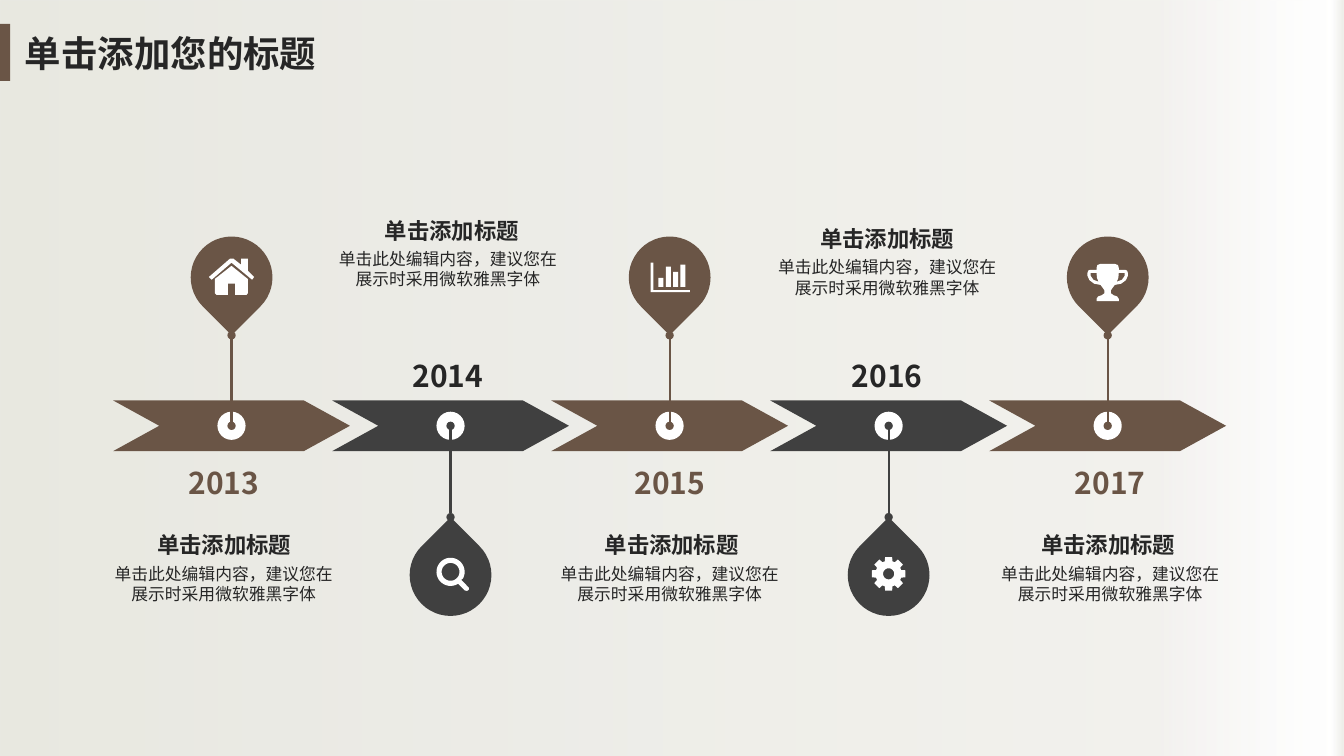
from math import cos, radians, sin

from lxml import etree
from pptx import Presentation
from pptx.dml.color import RGBColor
from pptx.enum import shapes, text
from pptx.oxml.ns import qn
from pptx.util import Cm, Pt

TITLE = "单击添加您的标题"
HEADING = "单击添加标题"
BODY = "单击此处编辑内容，建议您在展示时采用微软雅黑字体"

# year, icon, text column centre, heading centre, heading top (cm)
MILESTONES = [
    ("2013", "house", 5.64, 5.65, 13.39),
    ("2014", "magnifier", 11.29, 11.39, 5.46),
    ("2015", "chart", 16.88, 16.93, 13.39),
    ("2016", "gear", 22.36, 22.36, 5.67),
    ("2017", "trophy", 27.98, 27.93, 13.39),
]


class Theme:
    font = "Noto Sans CJK SC"
    brown, grey, ink, white = "6A5546", "404040", "262626", "FFFFFF"
    title, year, heading, body, stem = 26, 21.4, 16, 12, 1.5
    # position %, colour, opacity %
    backdrop = [(0, "E7E7DF", 94), (86, "F0EFEB", 85),
                (99, "FFFFFF", 62), (100, "EBEBE5", 100)]


# Layout in cm
SLIDE_W, SLIDE_H = 33.87, 19.05
ARROW_LEFT, ARROW_W, ARROW_H, PITCH = 2.85, 5.97, 1.28, 5.52
AXIS_Y = 10.73
RING, PIN = 0.71, 2.06
PIN_UP_Y, PIN_DOWN_Y = 6.99, 14.49
PIN_REACH = 1.46
YEAR_UP_Y, YEAR_DOWN_Y = 9.47, 12.17


def arc(cx, cy, radius, start=0, end=360, step=10):
    return [(cx + radius * cos(radians(a)), cy + radius * sin(radians(a)))
            for a in range(start, end, step)]


def mirrored(points):
    return [(-x, y) for x, y in reversed(points)]


def bar(left, top):
    return [(left, top), (left + 1.25, top), (left + 1.25, 2.4), (left, 2.4)]


CUP = [(0, -3.4), (1.8, -3.4), (2.6, -3.1), (2.8, -2.4), (2.8, -1.9),
       (4.4, -1.9), (4.9, -1.7), (5.1, -1.1), (5.1, -0.4), (4.6, 0.7),
       (3.4, 1.6), (1.8, 1.9), (1.2, 2.7), (0.8, 3.3), (0.8, 4), (1.5, 4.5),
       (2.4, 4.8), (2.8, 5.4), (2.8, 6), (0, 6)]
HANDLE = [(4.3, -1.1), (2.8, -1.1), (2.7, 0.1), (2.3, 1.1), (3.6, 0.6), (4.3, -0.4)]
TOOTH = [(-17, 3.3), (-12, 4.3), (12, 4.3), (17, 3.3)]  # angle, radius

# Outlines in mm from the pin centre
ICONS = {
    "house": [
        [(5.2, 0.6), (0, -3.7), (-5, 0.6), (-5.7, -0.1), (-0.4, -4.7),
         (0.5, -4.7), (2.4, -3.2), (2.4, -4.7), (4.1, -4.7), (4.1, -1.7),
         (5.7, -0.1)],
        [(4.1, 0.4), (4.1, 4), (3.8, 4.4), (0.9, 4.4), (0.9, 1.6), (-0.9, 1.6),
         (-0.9, 4.4), (-3.8, 4.4), (-4.2, 4), (-4.2, 0.4), (0, -2.9)],
    ],
    "magnifier": [
        arc(0, -0.8, 3.55, 58, 397) + [(2.7, 1.2), (4.6, 3.2), (4.6, 3.7),
                                       (4.2, 4), (3.6, 3.9), (1.9, 2.2)],
        arc(0, -0.8, 2.25)[::-1],
    ],
    "chart": [
        [(5.1, 3.7), (-4.8, 3.7), (-4.8, -3.7), (-4.1, -3.7), (-4.1, 3.2), (5.1, 3.2)],
        *[bar(-2.8 + 1.85 * i, top) for i, top in enumerate((0.1, -2.7, -1.4, -3.2))],
    ],
    "gear": [
        [(r * cos(radians(t + a)), r * sin(radians(t + a)) - 0.3)
         for t in range(0, 360, 45) for a, r in TOOTH],
        arc(0, -0.3, 1.4)[::-1],
    ],
    "trophy": [CUP + mirrored(CUP), HANDLE, mirrored(HANDLE)],
}

prs = Presentation()
prs.slide_width, prs.slide_height = Cm(SLIDE_W), Cm(SLIDE_H)
slide = prs.slides.add_slide(prs.slide_layouts[6])


def paint(sp, colour):
    sp.shadow.inherit = False
    sp.line.fill.background()
    sp.fill.solid()
    sp.fill.fore_color.rgb = RGBColor.from_string(colour)


def add_block(kind, left, top, width, height, colour):
    sp = slide.shapes.add_shape(kind, Cm(left), Cm(top), Cm(width), Cm(height))
    paint(sp, colour)
    return sp


def add_centred(kind, cx, cy, size, colour):
    return add_block(kind, cx - size / 2, cy - size / 2, size, size, colour)


def add_backdrop():
    sp = add_block(shapes.MSO_SHAPE.RECTANGLE, 0, 0, SLIDE_W, SLIDE_H, Theme.white)
    sp.fill.gradient()
    sp.fill.gradient_angle = 0
    stops = sp.element.spPr.find(".//" + qn("a:gsLst"))
    for old in list(stops):
        stops.remove(old)
    for position, colour, opacity in Theme.backdrop:
        stop = etree.SubElement(stops, qn("a:gs"), pos=str(position * 1000))
        clr = etree.SubElement(stop, qn("a:srgbClr"), val=colour)
        etree.SubElement(clr, qn("a:alpha"), val=str(opacity * 1000))


def add_label(words, left, top, width, height, size, colour=Theme.ink, bold=True,
              wrap=False, centred=True, anchor=text.MSO_ANCHOR.TOP):
    box = slide.shapes.add_textbox(Cm(left), Cm(top), Cm(width), Cm(height))
    tf = box.text_frame
    tf.word_wrap = wrap
    tf.auto_size = text.MSO_AUTO_SIZE.SHAPE_TO_FIT_TEXT
    tf.vertical_anchor = anchor
    p = tf.paragraphs[0]
    if centred:
        tf.margin_left = tf.margin_right = tf.margin_top = tf.margin_bottom = 0
        p.alignment = text.PP_ALIGN.CENTER
    r = p.add_run()
    r.text = words
    r.font.size, r.font.bold, r.font.name = Pt(size), bold, Theme.font
    r.font.color.rgb = RGBColor.from_string(colour)
    etree.SubElement(r.font._element, qn("a:ea"), typeface=Theme.font)


def add_stem(x, start_y, end_y, colour):
    """Line with a dot at each end, from pin tip to timeline."""
    line = slide.shapes.add_connector(shapes.MSO_CONNECTOR.STRAIGHT,
                                      Cm(x), Cm(start_y), Cm(x), Cm(end_y))
    line.line.color.rgb = RGBColor.from_string(colour)
    line.line.width = Pt(Theme.stem)
    ln = line.line._get_or_add_ln()
    for end in ("a:headEnd", "a:tailEnd"):
        etree.SubElement(ln, qn(end), type="oval")
    etree.SubElement(line._element.spPr, qn("a:effectLst"))


def add_icon(name, cx, cy):
    contours = [[(Cm(cx + x / 10), Cm(cy + y / 10)) for x, y in outline]
                for outline in ICONS[name]]
    builder = slide.shapes.build_freeform(*contours[0][0])
    for i, points in enumerate(contours):
        if i:
            builder.move_to(*points[0])
        builder.add_line_segments(points[1:], close=True)
    paint(builder.convert_to_shape(), Theme.white)


def add_milestone(i, year, icon, text_x, heading_x, heading_y):
    pin_up = i % 2 == 0
    colour = Theme.brown if pin_up else Theme.grey
    left = ARROW_LEFT + i * PITCH
    x = left + ARROW_W / 2
    arrow = add_block(shapes.MSO_SHAPE.NOTCHED_RIGHT_ARROW, left,
                      AXIS_Y - ARROW_H / 2, ARROW_W, ARROW_H, colour)
    arrow.adjustments[0], arrow.adjustments[1] = 1, 0.91
    add_centred(shapes.MSO_SHAPE.OVAL, x, AXIS_Y, RING, Theme.white)

    pin_y = PIN_UP_Y if pin_up else PIN_DOWN_Y
    add_stem(x, pin_y + (PIN_REACH if pin_up else -PIN_REACH), AXIS_Y, colour)
    pin = add_centred(shapes.MSO_SHAPE.TEAR, x, pin_y, PIN, colour)
    pin.rotation = 135 if pin_up else 315
    add_icon(icon, x, pin_y)

    year_y = YEAR_DOWN_Y if pin_up else YEAR_UP_Y
    add_label(year, text_x - 0.93, year_y - 0.46, 1.86, 0.92, Theme.year,
              Theme.brown if pin_up else Theme.ink, anchor=text.MSO_ANCHOR.MIDDLE)
    add_label(HEADING, heading_x - 1.72, heading_y, 3.44, 0.68, Theme.heading)
    add_label(BODY, text_x - 2.8, heading_y + 0.81, 5.6, 1.02, Theme.body,
              bold=False, wrap=True)


add_backdrop()
add_block(shapes.MSO_SHAPE.RECTANGLE, 0, 0.6, 0.26, 1.44, Theme.brown)
for index, milestone in enumerate(MILESTONES):
    add_milestone(index, *milestone)
add_label(TITLE, 0.38, 0.66, 9.93, 1.37, Theme.title, wrap=True, centred=False)

prs.save("out.pptx")
